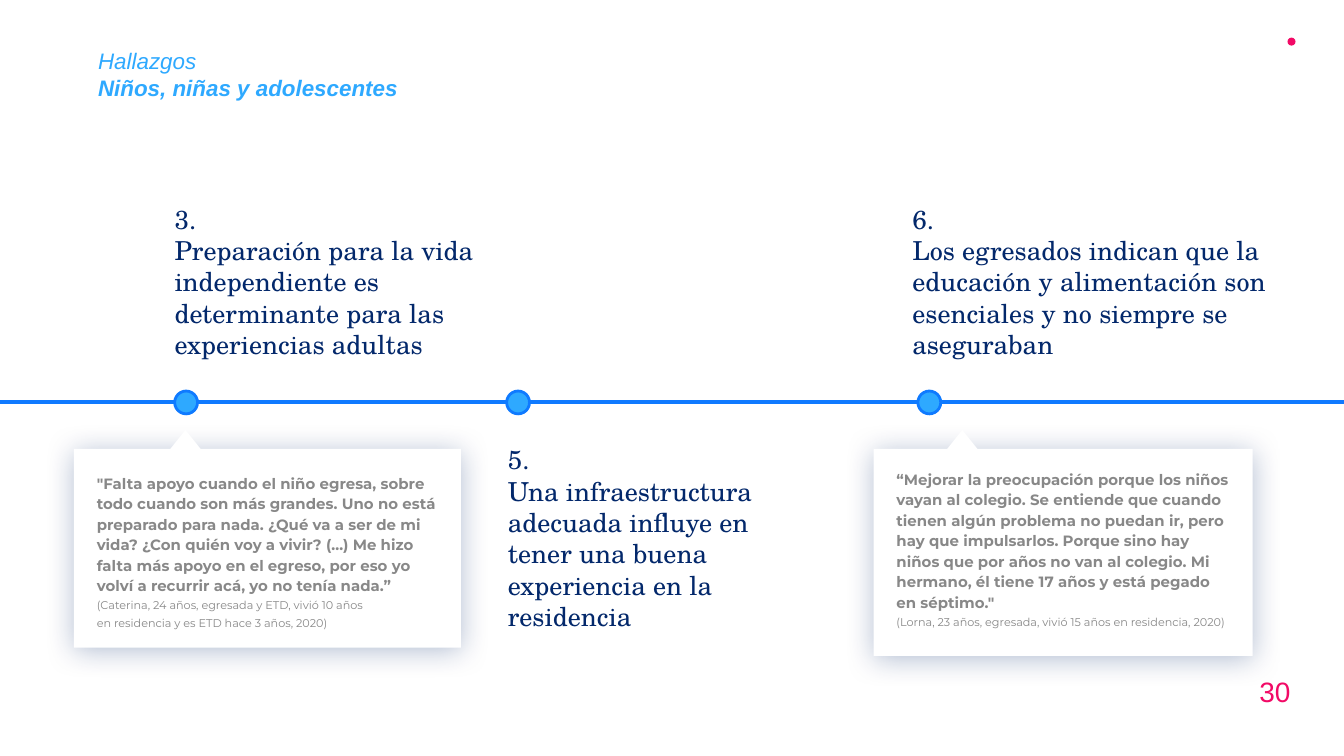
from dataclasses import dataclass

from lxml.etree import SubElement
from pptx import Presentation
from pptx.dml.color import RGBColor
from pptx.enum.shapes import MSO_CONNECTOR, MSO_SHAPE
from pptx.enum.text import MSO_ANCHOR, MSO_AUTO_SIZE, PP_ALIGN
from pptx.oxml.ns import qn
from pptx.slide import Slide
from pptx.text.text import TextFrame
from pptx.util import Inches, Pt

SKY = RGBColor(0x2E, 0xA9, 0xFF)
BLUE = RGBColor(0x0F, 0x7A, 0xFF)
NAVY = RGBColor(0x03, 0x28, 0x6B)
PINK = RGBColor(0xF2, 0x0A, 0x66)
GRAY = RGBColor(0x88, 0x88, 0x88)
WHITE = RGBColor(0xFF, 0xFF, 0xFF)

SLIDE_WIDTH = 10
SLIDE_HEIGHT = SLIDE_WIDTH * 9 / 16
TIMELINE_Y = 2.99
DOT_TOP, DOT_SIZE = 2.91, 0.17
CARD_TOP = 3.34
POINTER_TOP, POINTER_WIDTH, POINTER_HEIGHT = 3.2, 0.32, 0.2


@dataclass
class Finding:
    dot_left: float
    left: float
    top: float
    width: float
    lines: list[str]


@dataclass
class Quote:
    card_left: float
    card_width: float
    card_height: float
    pointer_left: float
    text_left: float
    text_top: float
    text_width: float
    words: str
    source: list[str]


FINDINGS = [
    Finding(1.3, 1.2, 1.41, 2.82, [
        "3.",
        "Preparación para la vida",
        "independiente es determinante para las experiencias adultas",
    ]),
    Finding(3.77, 3.68, 3.2, 2.51, [
        "5.",
        "Una infraestructura adecuada influye en tener una buena experiencia en la residencia",
    ]),
    Finding(6.83, 6.69, 1.41, 2.96, [
        "6.",
        "Los egresados indican que la",
        "educación y alimentación son",
        "esenciales y no siempre se",
        "aseguraban",
    ]),
]

QUOTES = [
    Quote(
        0.55, 2.88, 1.48, 1.22, 0.72, 3.48, 2.61,
        "\"Falta apoyo cuando el niño egresa, sobre todo cuando son más grandes. "
        "Uno no está preparado para nada. ¿Qué va a ser de mi vida? ¿Con quién voy "
        "a vivir? (...) Me hizo falta más apoyo en el egreso, por eso yo volví a "
        "recurrir acá, yo no tenía nada.”",
        ["(Caterina, 24 años, egresada y ETD, vivió 10 años",
         "en residencia y es ETD hace 3 años, 2020)"],
    ),
    Quote(
        6.5, 2.82, 1.54, 7, 6.67, 3.45, 2.48,
        "“Mejorar la preocupación porque los niños vayan al colegio. Se entiende que "
        "cuando tienen algún problema no puedan ir, pero hay que impulsarlos. Porque "
        "sino hay niños que por años no van al colegio. Mi hermano, él tiene 17 años "
        "y está pegado en séptimo.\"",
        ["(Lorna, 23 años, egresada, vivió 15 años en residencia, 2020)"],
    ),
]


def set_frame(frame: TextFrame, lines: list[str], side: float, top: float) -> None:
    """Fill a wrapped, top-anchored frame with one paragraph per line."""
    frame.word_wrap = True
    frame.auto_size = MSO_AUTO_SIZE.NONE
    frame.vertical_anchor = MSO_ANCHOR.TOP
    frame.margin_left = frame.margin_right = Inches(side)
    frame.margin_top, frame.margin_bottom = Inches(top), Inches(side)
    frame.text = "\n".join(lines)


def style_paragraph(paragraph, font_name: str, size: float, color: RGBColor,
                    bold: bool = False, italic: bool = False) -> None:
    paragraph.alignment = PP_ALIGN.LEFT
    for run in paragraph.runs:
        font = run.font
        font.name, font.size = font_name, Pt(size)
        font.bold, font.italic = bold, italic
        font.color.rgb = color


def add_text(slide: Slide, left: float, top: float, width: float, height: float,
             lines: list[str], side: float = 0, inset_top: float = 0.03) -> TextFrame:
    box = slide.shapes.add_textbox(Inches(left), Inches(top), Inches(width), Inches(height))
    set_frame(box.text_frame, lines, side, inset_top)
    return box.text_frame


def add_plain_shape(shapes, kind: MSO_SHAPE, left: float, top: float, width: float,
                    height: float, fill: RGBColor):
    shape = shapes.add_shape(kind, Inches(left), Inches(top), Inches(width), Inches(height))
    shape.shadow.inherit = False
    shape.fill.solid()
    shape.fill.fore_color.rgb = fill
    shape.line.fill.background()
    return shape


def add_soft_shadow(shape) -> None:
    effects = shape._element.spPr.find(qn("a:effectLst"))
    shadow = SubElement(effects, qn("a:outerShdw"), blurRad=str(Pt(15.8)),
                        dist=str(Pt(1.5)), dir=str(90 * 60000), algn="bl", rotWithShape="0")
    color = SubElement(shadow, qn("a:srgbClr"), val=str(NAVY))
    SubElement(color, qn("a:alpha"), val="30000")


def add_title(slide: Slide) -> None:
    title = slide.shapes.title
    title.left, title.top = Inches(0.63), Inches(0.25)
    title.width, title.height = Inches(3.53), Inches(0.43)
    set_frame(title.text_frame, ["Hallazgos", "Niños, niñas y adolescentes"], 0.1, 0.1)
    for index, paragraph in enumerate(title.text_frame.paragraphs):
        style_paragraph(paragraph, "Arial", 12, SKY, bold=index == 1, italic=True)


def add_timeline(slide: Slide) -> None:
    line = slide.shapes.add_connector(MSO_CONNECTOR.STRAIGHT, 0, Inches(TIMELINE_Y),
                                      Inches(SLIDE_WIDTH), Inches(TIMELINE_Y))
    line.line.color.rgb = BLUE
    line.line.width = Pt(2.25)
    SubElement(line._element.spPr, qn("a:effectLst"))


def add_finding(slide: Slide, finding: Finding) -> None:
    dot = add_plain_shape(slide.shapes, MSO_SHAPE.OVAL, finding.dot_left,
                          DOT_TOP, DOT_SIZE, DOT_SIZE, SKY)
    dot.line.color.rgb = BLUE
    dot.line.width = Pt(1.5)
    frame = add_text(slide, finding.left, finding.top, finding.width, 0.71,
                     finding.lines, 0.1, 0.1)
    for paragraph in frame.paragraphs:
        style_paragraph(paragraph, "TeX Gyre Schola", 14, NAVY)


def add_quote(slide: Slide, quote: Quote) -> None:
    bubble = slide.shapes.add_group_shape()
    card = add_plain_shape(bubble.shapes, MSO_SHAPE.RECTANGLE, quote.card_left, CARD_TOP,
                           quote.card_width, quote.card_height, WHITE)
    add_soft_shadow(card)
    add_plain_shape(bubble.shapes, MSO_SHAPE.ISOSCELES_TRIANGLE, quote.pointer_left,
                    POINTER_TOP, POINTER_WIDTH, POINTER_HEIGHT, WHITE)
    frame = add_text(slide, quote.text_left, quote.text_top, quote.text_width, 0.43,
                     [quote.words, *quote.source])
    for index, paragraph in enumerate(frame.paragraphs):
        is_quote = index == 0
        paragraph.line_spacing = 1.15
        paragraph.space_before = Pt(0 if is_quote else 1)
        style_paragraph(paragraph, "Montserrat", 8 if is_quote else 6, GRAY, bold=is_quote)


def main() -> None:
    presentation = Presentation()
    presentation.slide_width = Inches(SLIDE_WIDTH)
    presentation.slide_height = Inches(SLIDE_HEIGHT)
    slide = presentation.slides.add_slide(presentation.slide_layouts.get_by_name("Title Only"))

    add_title(slide)
    page_number = add_text(slide, 9.37, 5.01, 0.33, 0.26, ["30"], inset_top=0.01)
    style_paragraph(page_number.paragraphs[0], "Arial", 15, PINK)
    add_plain_shape(slide.shapes, MSO_SHAPE.OVAL, 9.58, 0.28, 0.06, 0.06, PINK)
    add_timeline(slide)
    for finding in FINDINGS:
        add_finding(slide, finding)
    for quote in QUOTES:
        add_quote(slide, quote)

    presentation.save("out.pptx")


if __name__ == "__main__":
    main()
